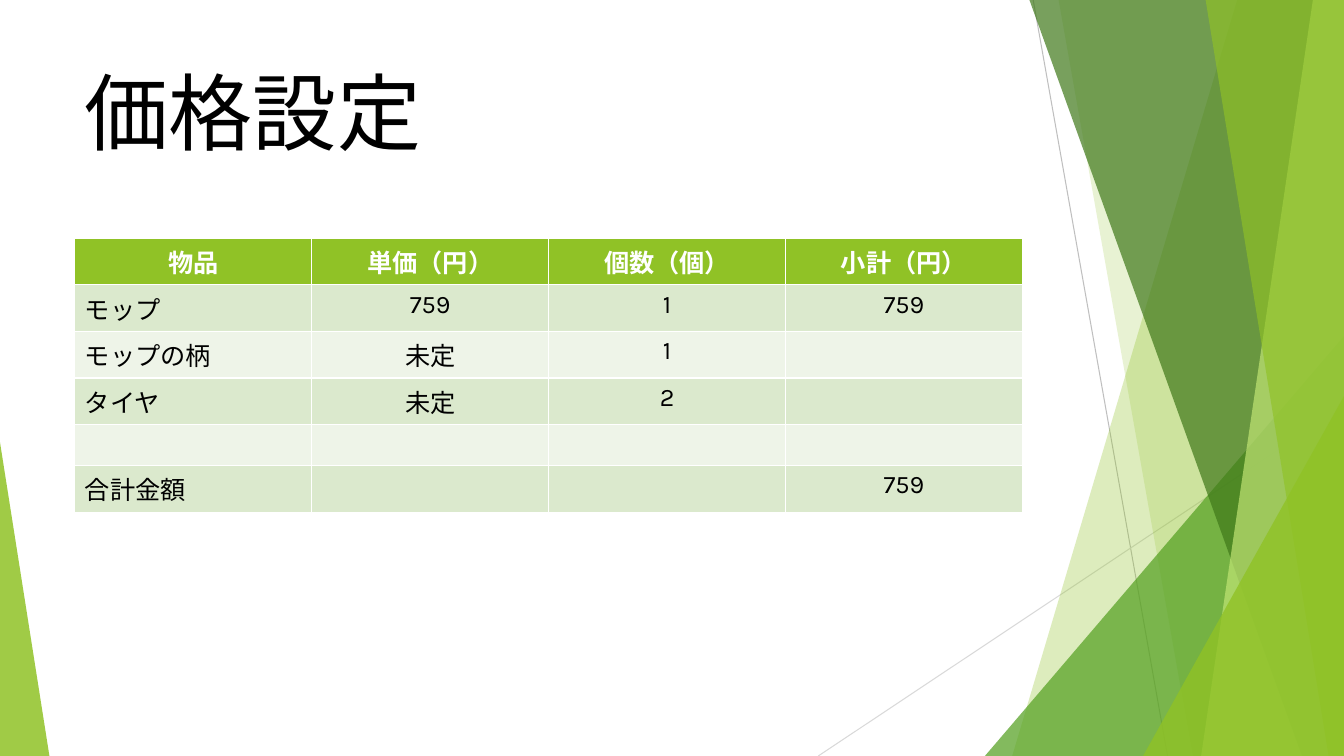
"""Build the price-setting slide: green facets, a title and a cost table."""
from lxml.etree import SubElement
from pptx import Presentation
from pptx.dml.color import RGBColor
from pptx.enum.lang import MSO_LANGUAGE_ID as Language
from pptx.enum.shapes import MSO_CONNECTOR as Connector, MSO_SHAPE as Preset
from pptx.enum.text import MSO_ANCHOR as Anchor, MSO_AUTO_SIZE as AutoSize, PP_ALIGN as Align
from pptx.oxml.ns import qn
from pptx.util import Pt

WHITE = RGBColor(0xFF, 0xFF, 0xFF)
BLACK = RGBColor(0x00, 0x00, 0x00)
LIME = RGBColor(0x90, 0xC2, 0x26)
PALE_LIME = RGBColor(0xC0, 0xE4, 0x74)
GREEN = RGBColor(0x54, 0xA0, 0x21)
DARK_GREEN = RGBColor(0x3F, 0x78, 0x19)
ODD_ROW = RGBColor(0xDB, 0xE9, 0xCD)
EVEN_ROW = RGBColor(0xEE, 0xF4, 0xE8)
GREY = RGBColor(0xBF, 0xBF, 0xBF)
LIGHT_GREY = RGBColor(0xD9, 0xD9, 0xD9)
WIDTH, HEIGHT, BAND_TOP = 960, 540, -0.6
LEFT, CONTENT_WIDTH = 53.5, 676.8


def paint(shape, color, opacity):
    shape.shadow.inherit = False
    shape.fill.solid()
    shape.fill.fore_color.rgb = color
    shape.line.fill.background()
    tint = shape.fill._xPr.find(qn("a:solidFill"))[0]
    SubElement(tint, qn("a:alpha")).set("val", str(opacity * 1000))


def write(para, text, align, **formats):
    para.alignment = align
    span = para.add_run()
    span.text = text
    span.font.color.rgb = formats.pop("color")
    formats.update(name="Karla", language_id=Language.JAPANESE)
    for name, value in formats.items():
        setattr(span.font, name, value)


deck = Presentation()
deck.slide_width, deck.slide_height = Pt(WIDTH), Pt(HEIGHT)
page = deck.slides.add_slide(deck.slide_layouts[5])

for x1, y1, x2, y2, color in [
    (738, 0, 834, HEIGHT, GREY),
    (WIDTH, 290, 584.5, HEIGHT, LIGHT_GREY),
]:
    line = page.shapes.add_connector(Connector.STRAIGHT, Pt(x1), Pt(y1), Pt(x2), Pt(y2))
    line.line.color.rgb = color
    line.line.width = Pt(0.75)
    SubElement(line._element.spPr, qn("a:effectLst"))

for kind, place, color, opacity in [
    ("band", (884, 723), LIME, 30),
    ("band", (756, 852), LIME, 20),
    ("wedge", (703.5, 240, WIDTH, 1), GREEN, 72),
    ("band", (735, 929.5), DARK_GREEN, 70),
    ("band", (938, 858.5), PALE_LIME, 70),
    ("band", (861, 949), LIME, 65),
    ("wedge", (816.5, 283, WIDTH, 1), LIME, 80),
    ("wedge", (0, 316, 35.3, 0), LIME, 85),
]:
    if kind == "band":
        top_x, bottom_x = place
        outline = page.shapes.build_freeform(top_x, BAND_TOP, scale=Pt(1))
        outline.add_line_segments([(WIDTH, BAND_TOP), (WIDTH, HEIGHT), (bottom_x, HEIGHT)])
        facet = outline.convert_to_shape()
    else:
        left, top, right, apex = place
        facet = page.shapes.add_shape(
            Preset.ISOSCELES_TRIANGLE, Pt(left), Pt(top), Pt(right - left), Pt(HEIGHT - top))
        facet.adjustments[0] = apex
    paint(facet, color, opacity)

title = page.shapes.title
title.left, title.top, title.width, title.height = Pt(LEFT), Pt(48), Pt(CONTENT_WIDTH), Pt(104)
for name, value in {
    "vertical_anchor": Anchor.TOP, "auto_size": AutoSize.NONE, "word_wrap": True,
}.items():
    setattr(title.text_frame, name, value)
title_para = title.text_frame.paragraphs[0]
title_para.line_spacing = 0.9
write(title_para, "価格設定", Align.LEFT, size=Pt(60), color=BLACK)

prices = [
    ("物品", "単価（円）", "個数（個）", "小計（円）"),
    ("モップ", "759", "1", "759"),
    ("モップの柄", "未定", "1", ""),
    ("タイヤ", "未定", "2", ""),
    ("", "", "", ""),
    ("合計金額", "", "", "759"),
]
table = page.shapes.add_table(
    len(prices), len(prices[0]), Pt(LEFT), Pt(170.2), Pt(CONTENT_WIDTH), Pt(175)).table
for row, texts in enumerate(prices):
    header = row == 0
    for column, text in enumerate(texts):
        cell = table.cell(row, column)
        cell.fill.solid()
        cell.fill.fore_color.rgb = LIME if header else ODD_ROW if row % 2 else EVEN_ROW
        if text:
            align = Align.CENTER if header or column else Align.LEFT
            write(cell.text_frame.paragraphs[0], text, align,
                  size=Pt(18), bold=header, color=WHITE if header else BLACK)

deck.save("out.pptx")
